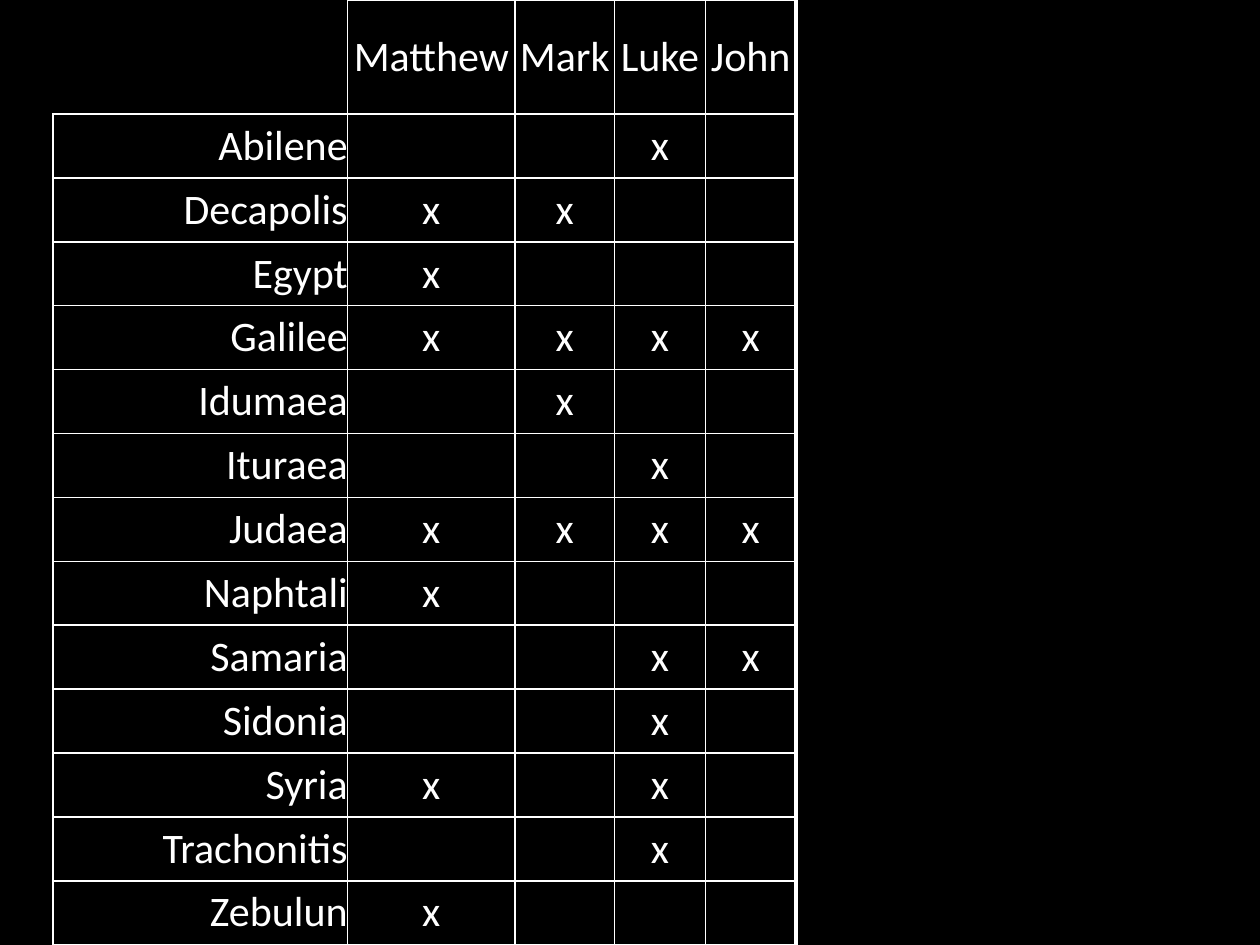
import lxml.etree
import pptx
import pptx.dml.color
import pptx.enum.text
import pptx.oxml.ns
import pptx.util

Cm = pptx.util.Cm
Pt = pptx.util.Pt
ALIGN = pptx.enum.text.PP_ALIGN
BLACK = pptx.dml.color.RGBColor(0x00, 0x00, 0x00)
WHITE = pptx.dml.color.RGBColor(0xFF, 0xFF, 0xFF)
FONT = "Calibri"

TABLE_LEFT = Cm(1.07)
HEADER_HEIGHT = Cm(2.3)
COLUMN_WIDTHS = [Cm(width) for width in (5.94, 3.37, 2.01, 1.83, 1.83)]

GOSPELS = ["Matthew", "Mark", "Luke", "John"]
REGIONS = {
    "Abilene": ["Luke"],
    "Decapolis": ["Matthew", "Mark"],
    "Egypt": ["Matthew"],
    "Galilee": GOSPELS,
    "Idumaea": ["Mark"],
    "Ituraea": ["Luke"],
    "Judaea": GOSPELS,
    "Naphtali": ["Matthew"],
    "Samaria": ["Luke", "John"],
    "Sidonia": ["Luke"],
    "Syria": ["Matthew", "Luke"],
    "Trachonitis": ["Luke"],
    "Zebulun": ["Matthew"],
}


def set_borders(cell, left=1, right=1, top=1, bottom=1):
    """Draw white cell borders with widths in points; 0 hides a side."""
    properties = cell._tc.get_or_add_tcPr()
    qualified = pptx.oxml.ns.qn
    sides = {"a:lnL": left, "a:lnR": right, "a:lnT": top, "a:lnB": bottom}
    for index, (tag, width) in enumerate(sides.items()):
        line = lxml.etree.Element(qualified(tag), w=str(int(Pt(width))))
        if width:
            fill = lxml.etree.SubElement(line, qualified("a:solidFill"))
            lxml.etree.SubElement(fill, qualified("a:srgbClr"), val=str(WHITE))
        else:
            lxml.etree.SubElement(line, qualified("a:noFill"))
        properties.insert(index, line)


def fill_cell(cell, text, alignment):
    cell.fill.background()
    cell.margin_left = cell.margin_right = 0
    cell.margin_top = cell.margin_bottom = 0
    cell.vertical_anchor = pptx.enum.text.MSO_ANCHOR.MIDDLE
    paragraph = cell.text_frame.paragraphs[0]
    paragraph.alignment = alignment
    if text:
        run = paragraph.add_run()
        run.text = text
        run.font.name = FONT
        run.font.size = Pt(24)
        run.font.color.rgb = WHITE


def add_region_table(slide, height):
    contents = [[""] + GOSPELS]
    for region, mentions in REGIONS.items():
        marks = ["x" if gospel in mentions else "" for gospel in GOSPELS]
        contents.append([region] + marks)

    frame = slide.shapes.add_table(
        len(contents), len(COLUMN_WIDTHS), TABLE_LEFT, 0, sum(COLUMN_WIDTHS), height
    )
    table = frame.table
    table.first_row = table.horz_banding = False

    # Column widths, a tall header and equal region rows
    for column, width in zip(table.columns, COLUMN_WIDTHS):
        column.width = width
    for row in table.rows:
        row.height = (height - HEADER_HEIGHT) // len(REGIONS)
    table.rows[0].height = HEADER_HEIGHT

    # Cell text and borders, with an open corner and a heavy right edge
    last_column = len(COLUMN_WIDTHS) - 1
    for row_index, texts in enumerate(contents):
        for column_index, text in enumerate(texts):
            cell = table.cell(row_index, column_index)
            fill_cell(cell, text, ALIGN.CENTER if column_index else ALIGN.RIGHT)
            outer = 1 if row_index or column_index else 0
            right = 3 if column_index == last_column else 1
            set_borders(cell, left=outer, right=right, top=outer)


def main():
    presentation = pptx.Presentation()
    presentation.slide_width = Cm(25.4)
    presentation.slide_height = Cm(19.05)
    slide = presentation.slides.add_slide(presentation.slide_layouts[6])
    slide.background.fill.solid()
    slide.background.fill.fore_color.rgb = BLACK
    add_region_table(slide, presentation.slide_height)
    presentation.save("out.pptx")


if __name__ == "__main__":
    main()
